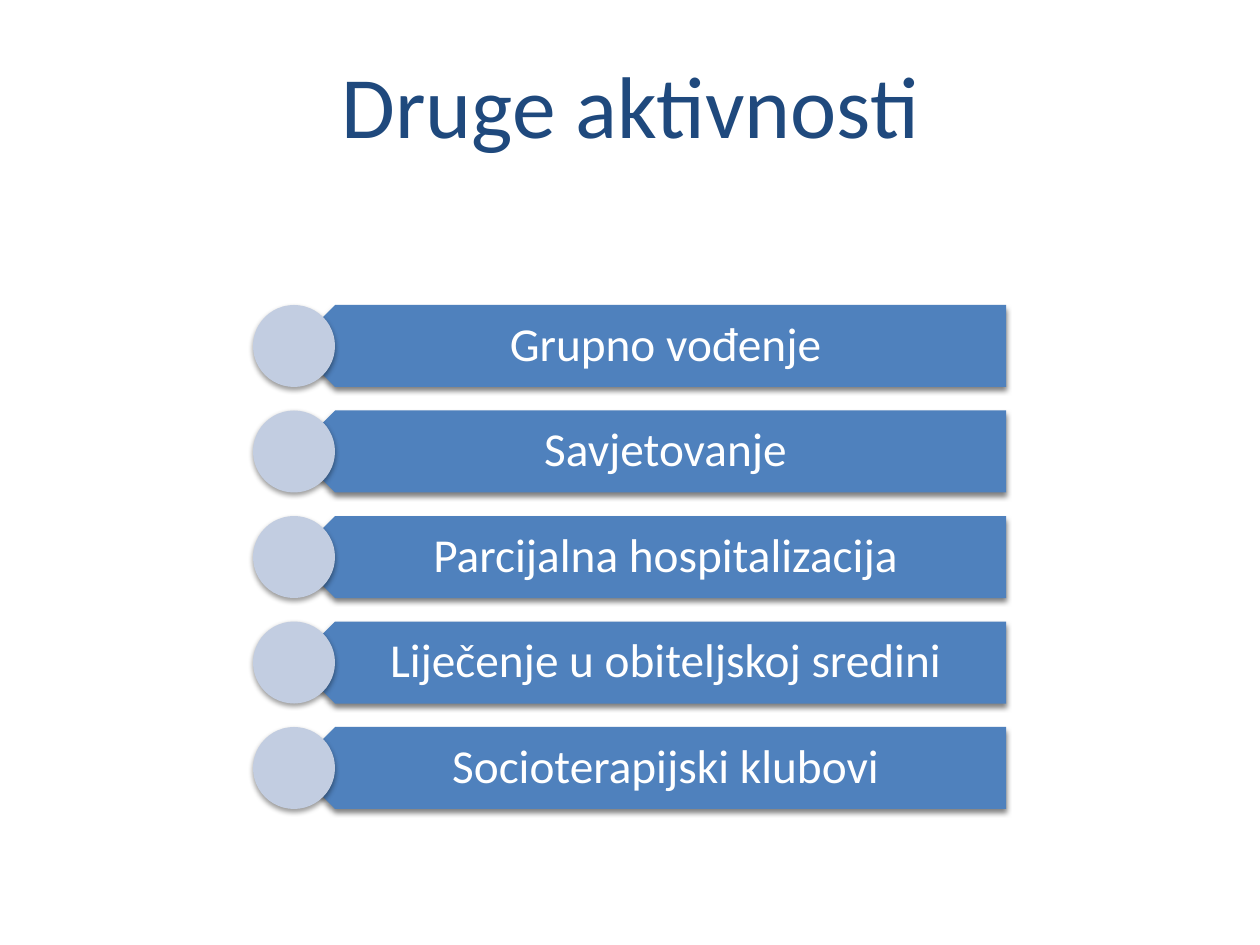
"""Builds the slide "Druge aktivnosti": a title above five labelled bars with discs."""
from dataclasses import dataclass

from lxml.etree import SubElement
from pptx import Presentation
from pptx.dml.color import RGBColor
from pptx.enum.shapes import MSO_SHAPE as Shape
from pptx.enum.text import MSO_ANCHOR as Anchor, PP_ALIGN as Align
from pptx.oxml.ns import qn
from pptx.util import Emu, Pt


@dataclass(frozen=True)
class Theme:
    font: str = "Calibri"
    title: str = "1F497D"
    bar: str = "4F81BD"
    disc: str = "C2CDE1"
    label: str = "FFFFFF"
    shadow: str = "000000"
    title_size: int = 50
    label_size: int = 27


THEME = Theme()
SCALE = 914400 / 126


def px(*lengths):
    return [Emu(round(length * SCALE)) for length in lengths]


def style_shape(shape, color, opacity, blur, distance):
    shape.fill.solid()
    shape.fill.fore_color.rgb = RGBColor.from_string(color)
    shape.line.fill.background()
    shape.shadow.inherit = False
    effects = shape.element.spPr.find(qn("a:effectLst"))
    shadow = SubElement(effects, qn("a:outerShdw"), blurRad=str(Pt(blur)),
                        dist=str(Pt(distance)), dir="5400000", rotWithShape="0")
    shade = SubElement(shadow, qn("a:srgbClr"), val=THEME.shadow)
    SubElement(shade, qn("a:alpha"), val=str(opacity * 1000))


deck = Presentation()
deck.slide_width, deck.slide_height = px(1260, 945)
slide = deck.slides.add_slide(deck.slide_layouts[5])

title = slide.shapes.title
title.left, title.top, title.width, title.height = px(95, 9, 1071, 189)
title.text_frame.text = "Druge aktivnosti"
title.text_frame.vertical_anchor = Anchor.MIDDLE
heading = title.text_frame.paragraphs[0]
heading.alignment = Align.CENTER
heading_font = heading.runs[0].font
heading_font.name = THEME.font
heading_font.size = Pt(THEME.title_size)
heading_font.color.rgb = RGBColor.from_string(THEME.title)

activities = [
    "Grupno vođenje",
    "Savjetovanje",
    "Parcijalna hospitalizacija",
    "Liječenje u obiteljskoj sredini",
    "Socioterapijski klubovi",
]
FIRST_TOP, LAST_TOP, ROW_HEIGHT = 305, 727, 82
pitch = (LAST_TOP - FIRST_TOP) / (len(activities) - 1)
diagram = slide.shapes.add_group_shape().shapes

for row, activity in enumerate(activities):
    top = FIRST_TOP + row * pitch

    bar = diagram.add_shape(Shape.PENTAGON, *px(294, top, 712, ROW_HEIGHT))
    bar.rotation = 180
    style_shape(bar, THEME.bar, 50, 3, 2)

    label = diagram.add_textbox(*px(315, top, 692, ROW_HEIGHT))
    frame = label.text_frame
    frame.word_wrap = True
    frame.vertical_anchor = Anchor.MIDDLE
    frame.margin_left, frame.margin_right = px(35, 26)
    frame.margin_top, frame.margin_bottom = px(14, 14)
    frame.text = activity
    line = frame.paragraphs[0]
    line.alignment = Align.CENTER
    line.line_spacing = 0.9
    line.space_after = Pt(9)
    font = line.runs[0].font
    font.name = THEME.font
    font.size = Pt(THEME.label_size)
    font.color.rgb = RGBColor.from_string(THEME.label)

    disc = diagram.add_shape(Shape.OVAL, *px(253, top, ROW_HEIGHT, ROW_HEIGHT))
    style_shape(disc, THEME.disc, 38, 3.1, 1.6)

deck.save("out.pptx")
